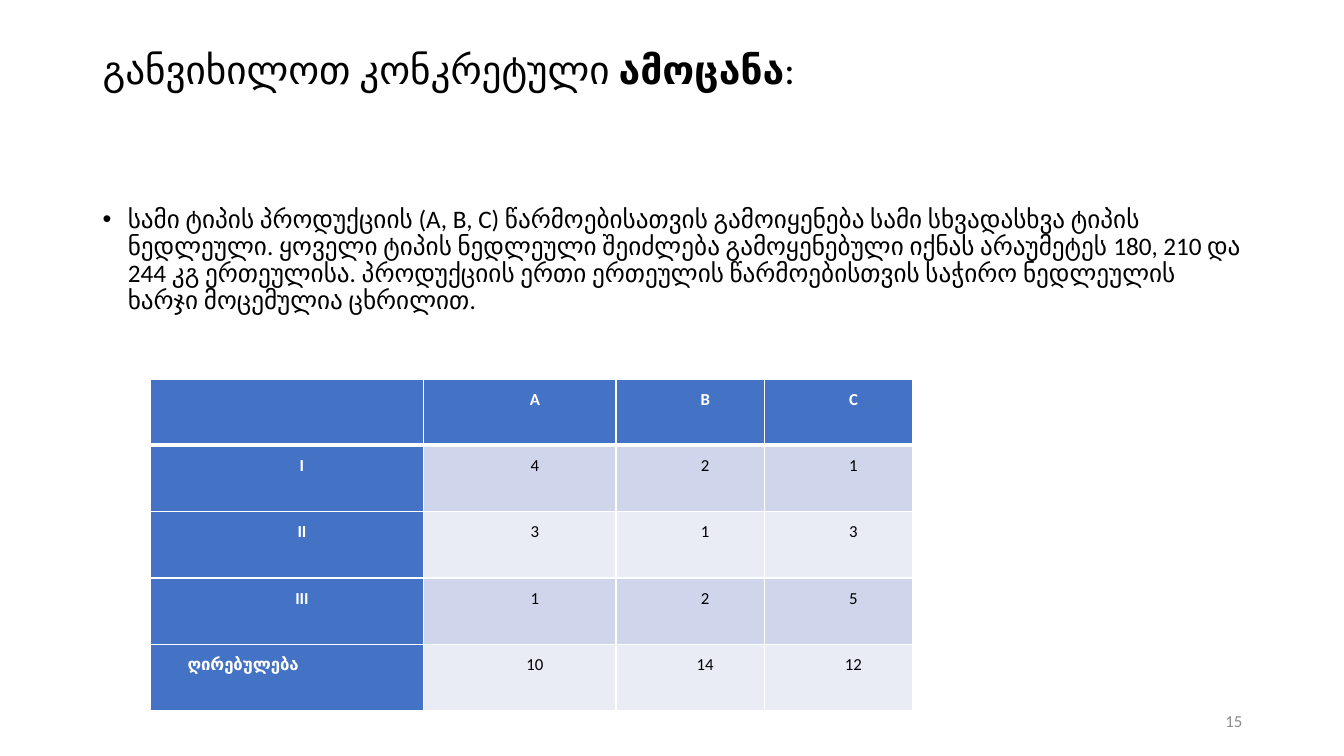
from lxml.etree import SubElement
from pptx import Presentation
from pptx.dml.color import RGBColor
from pptx.enum.text import MSO_ANCHOR, PP_ALIGN
from pptx.oxml.ns import qn
from pptx.util import Inches, Pt

COLORS = {"text": "000000", "white": "FFFFFF", "head": "4472C4",
          "band_dark": "CFD5EA", "band_light": "E9EBF5", "number": "8C8C8C"}
FONT = "Calibri"
COLUMN_WIDTHS = [2.71, 1.91, 1.47, 1.47]
ROWS = [["", "A", "B", "C"],
        ["I", "4", "2", "1"],
        ["II", "3", "1", "3"],
        ["III", "1", "2", "5"],
        ["ღირებულება", "10", "14", "12"]]
PROBLEM = ("სამი ტიპის პროდუქციის (A, B, C) წარმოებისათვის გამოიყენება სამი "
           "სხვადასხვა ტიპის ნედლეული. ყოველი ტიპის ნედლეული შეიძლება "
           "გამოყენებული იქნას არაუმეტეს 180, 210 და 244 კგ ერთეულისა. "
           "პროდუქციის ერთი ერთეულის წარმოებისთვის საჭირო ნედლეულის ხარჯი "
           "მოცემულია ცხრილით.")


def color(name):
    """Return the named colour."""
    return RGBColor.from_string(COLORS[name])


def add_text(p, text, size=18, fill="text", bold=False, align=None,
             spacing=None, before=None, margin=0, indent=0):
    """Append a formatted run to a paragraph and format the paragraph."""
    r = p.add_run()
    r.text = text
    r.font.name, r.font.size, r.font.bold = FONT, Pt(size), bold
    r.font.color.rgb = color(fill)
    p.alignment, p.line_spacing = align, spacing
    if before is not None:
        p.space_before = Pt(before)
    pPr = p._p.get_or_add_pPr()
    pPr.set("marL", str(Inches(margin)))
    pPr.set("indent", str(Inches(indent)))


def add_box(s, box, anchor=MSO_ANCHOR.TOP):
    """Add a wrapping text box and return its text frame."""
    tf = s.shapes.add_textbox(*map(Inches, box)).text_frame
    tf.word_wrap = True
    tf.vertical_anchor = anchor
    return tf


def add_title(s, box):
    """Add the title with its emphasised word."""
    tf = add_box(s, box)
    tf.margin_top = Inches(0.1)
    p = tf.paragraphs[0]
    for text, bold in [("განვიხილოთ კონკრეტული ", False),
                       ("ამოცანა", True), (":", False)]:
        add_text(p, text, size=28, bold=bold, spacing=0.9)


def add_problem(s, box):
    """Add the bulleted statement of the problem."""
    p = add_box(s, box).paragraphs[0]
    add_text(p, PROBLEM, spacing=0.9, before=10, margin=0.25, indent=-0.25)
    pPr = p._p.get_or_add_pPr()
    SubElement(pPr, qn("a:buFont"), typeface="Arial")
    SubElement(pPr, qn("a:buChar"), char="•")


def add_border(cell, side, width):
    """Draw a white border on one side of a cell."""
    tcPr = cell._tc.get_or_add_tcPr()
    ln = SubElement(tcPr, qn(f"a:ln{side}"), w=str(Pt(width)))
    fill = SubElement(ln, qn("a:solidFill"))
    SubElement(fill, qn("a:srgbClr"), val=COLORS["white"])


def format_cell(cell, text, row, col):
    """Fill, border and label one cell according to its place."""
    head = row == 0 or col == 0
    for side in "LRTB":
        heavy = (row, side) in [(0, "B"), (1, "T")]
        add_border(cell, side, 3 if heavy else 1)
    cell.fill.solid()
    band = "band_dark" if row % 2 else "band_light"
    cell.fill.fore_color.rgb = color("head" if head else band)
    cell.margin_left = cell.margin_right = Inches(0.07)
    cell.margin_top = cell.margin_bottom = 0
    if text:
        last_label = col == 0 and row == len(ROWS) - 1
        add_text(cell.text_frame.paragraphs[0], text, size=12, bold=head,
                 fill="white" if head else "text", spacing=1.5, indent=0.3,
                 align=PP_ALIGN.JUSTIFY if last_label else PP_ALIGN.CENTER)


def add_cost_table(s, box):
    """Add the table of material costs."""
    table = s.shapes.add_table(len(ROWS), len(COLUMN_WIDTHS),
                               *map(Inches, box)).table
    table.first_col = True
    for column, width in zip(table.columns, COLUMN_WIDTHS):
        column.width = Inches(width)
    for i, row in enumerate(ROWS):
        for j, text in enumerate(row):
            format_cell(table.cell(i, j), text, i, j)


def add_number(s, box):
    """Add the slide number."""
    p = add_box(s, box, MSO_ANCHOR.MIDDLE).paragraphs[0]
    add_text(p, "15", size=12, fill="number", align=PP_ALIGN.RIGHT)


def main():
    """Build and save the slide."""
    prs = Presentation()
    prs.slide_width, prs.slide_height = Inches(13.33), Inches(7.5)
    s = prs.slides.add_slide(prs.slide_layouts[6])
    add_title(s, (0.92, 0.4, 11.5, 1.45))
    add_problem(s, (0.92, 2, 11.5, 4.76))
    add_cost_table(s, (1.49, 3.76, 7.56, 3.29))
    add_number(s, (9.42, 6.95, 3, 0.4))
    prs.save("out.pptx")


if __name__ == "__main__":
    main()
